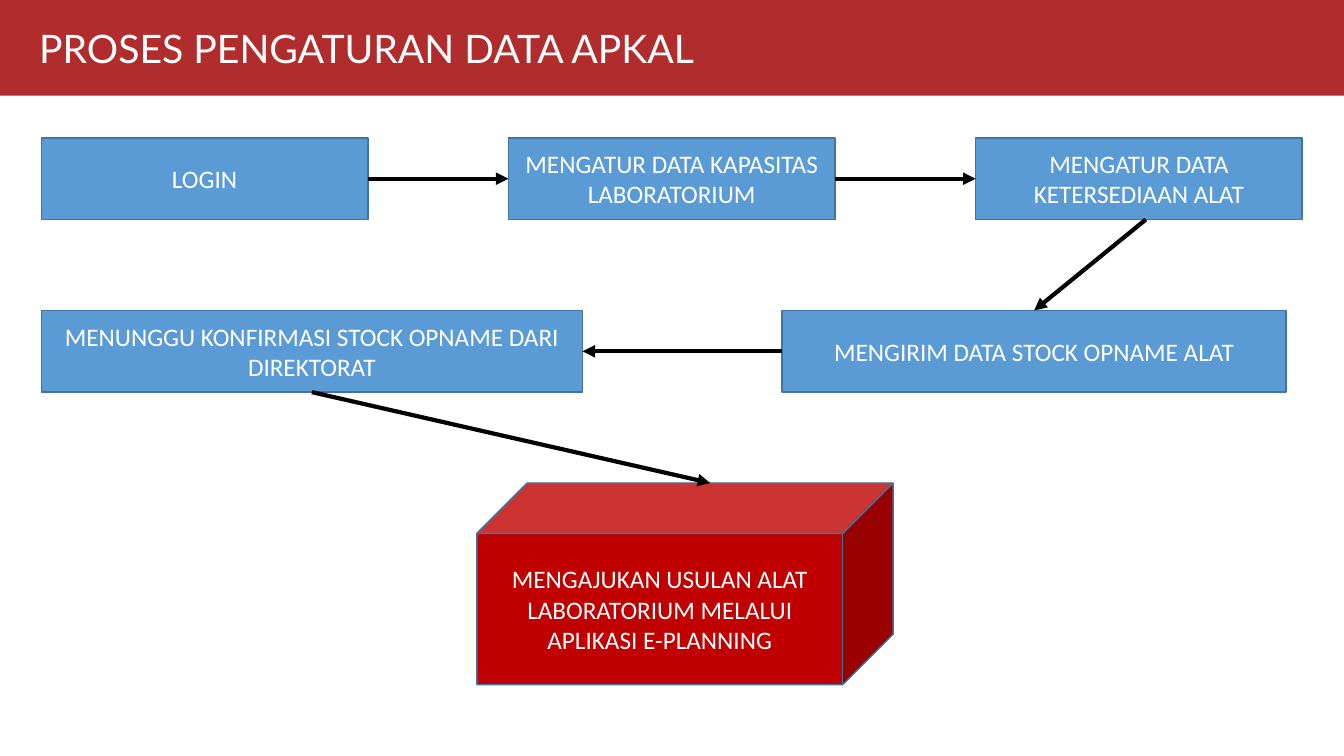
from dataclasses import dataclass

import pptx
import pptx.dml.color
import pptx.enum.shapes
import pptx.enum.text
import pptx.oxml
import pptx.oxml.ns
import pptx.util

Pt = pptx.util.Pt
SHAPES = pptx.enum.shapes.MSO_SHAPE
ALIGN = pptx.enum.text.PP_ALIGN
ANCHOR = pptx.enum.text.MSO_ANCHOR

BLUE, OUTLINE, RED, BANNER = "5B9BD5", "43739E", "C00000", "B12D2D"
WHITE, BLACK = "FFFFFF", "000000"

# Layout, in points
MARGIN = 29.5
STEP_PITCH = 333.7
STEP_WIDTH, STEP_HEIGHT = 233.3, 58.3
FIRST_ROW, SECOND_ROW, THIRD_ROW = 98.5, 221.8, 345


@dataclass
class Step:
    text: str
    left: float
    top: float
    width: float = STEP_WIDTH
    height: float = STEP_HEIGHT
    color: str = BLUE
    preset: SHAPES = SHAPES.RECTANGLE

    @property
    def right(self) -> float:
        return self.left + self.width

    @property
    def bottom(self) -> float:
        return self.top + self.height

    @property
    def middle(self) -> float:
        return self.top + self.height / 2

    @property
    def center(self) -> float:
        return self.left + self.width / 2


@dataclass
class Arrow:
    x1: float
    y1: float
    x2: float
    y2: float


def rgb(color: str) -> pptx.dml.color.RGBColor:
    return pptx.dml.color.RGBColor.from_string(color)


def fill(shape, color: str) -> None:
    shape.fill.solid()
    shape.fill.fore_color.rgb = rgb(color)


def write(shape, text: str, font: str, size: float, align: ALIGN) -> None:
    frame = shape.text_frame
    frame.word_wrap = True
    frame.vertical_anchor = ANCHOR.MIDDLE
    frame.text = text
    paragraph = frame.paragraphs[0]
    paragraph.alignment = align
    paragraph.font.name = font
    paragraph.font.size = Pt(size)
    paragraph.font.color.rgb = rgb(WHITE)


def draw_step(slide, step: Step) -> None:
    shape = slide.shapes.add_shape(
        step.preset, Pt(step.left), Pt(step.top), Pt(step.width), Pt(step.height))
    shape.shadow.inherit = False
    fill(shape, step.color)
    shape.line.color.rgb = rgb(OUTLINE)
    shape.line.width = Pt(1)
    write(shape, step.text, "Calibri", 18, ALIGN.CENTER)


def draw_arrow(slide, arrow: Arrow) -> None:
    connector = slide.shapes.add_connector(
        pptx.enum.shapes.MSO_CONNECTOR.STRAIGHT,
        Pt(arrow.x1), Pt(arrow.y1), Pt(arrow.x2), Pt(arrow.y2))
    connector.line.color.rgb = rgb(BLACK)
    connector.line.width = Pt(3)
    head = pptx.oxml.parse_xml(
        f'<a:tailEnd {pptx.oxml.ns.nsdecls("a")} type="triangle"/>')
    connector.line._get_or_add_ln().append(head)
    connector._element.spPr.append(
        pptx.oxml.parse_xml(f'<a:effectLst {pptx.oxml.ns.nsdecls("a")}/>'))


def draw_banner(banner, text: str, width: float) -> None:
    banner.left, banner.top = Pt(0), Pt(0)
    banner.width, banner.height = Pt(width), Pt(68.4)
    fill(banner, BANNER)
    frame = banner.text_frame
    frame.margin_left = frame.margin_right = Pt(28)
    frame.margin_top = frame.margin_bottom = Pt(17)
    frame.auto_size = pptx.enum.text.MSO_AUTO_SIZE.NONE
    write(banner, text, "Lato", 28, ALIGN.LEFT)


def main() -> None:
    presentation = pptx.Presentation()
    presentation.slide_width, presentation.slide_height = Pt(960), Pt(540)
    slide = presentation.slides.add_slide(presentation.slide_layouts[5])

    # Title banner
    draw_banner(slide.shapes.title, "PROSES PENGATURAN DATA APKAL", 960)

    # Process steps
    login, capacity, availability = [
        Step(text, MARGIN + column * STEP_PITCH, FIRST_ROW)
        for column, text in enumerate((
            "LOGIN",
            "MENGATUR DATA KAPASITAS LABORATORIUM",
            "MENGATUR DATA KETERSEDIAAN ALAT"))
    ]
    sending = Step("MENGIRIM DATA STOCK OPNAME ALAT", 558.7, SECOND_ROW, 360)
    confirmation = Step("MENUNGGU KONFIRMASI STOCK OPNAME DARI DIREKTORAT",
                        MARGIN, SECOND_ROW, 386.6)
    proposal = Step("MENGAJUKAN USULAN ALAT LABORATORIUM MELALUI APLIKASI E-PLANNING",
                    340.6, THIRD_ROW, 297.4, 144, RED, SHAPES.CUBE)
    for step in (login, capacity, availability, sending, confirmation, proposal):
        draw_step(slide, step)

    # Arrows between the steps; the cube's top face is offset by its depth
    cube_depth = proposal.height / 4
    arrows = (
        Arrow(login.right, login.middle, capacity.left, capacity.middle),
        Arrow(capacity.right, capacity.middle, availability.left, availability.middle),
        Arrow(818.5, availability.bottom, sending.center, sending.top),
        Arrow(sending.left, sending.middle, confirmation.right, confirmation.middle),
        Arrow(confirmation.center, confirmation.bottom,
              proposal.center + cube_depth / 2, proposal.top),
    )
    for arrow in arrows:
        draw_arrow(slide, arrow)

    presentation.save("out.pptx")


if __name__ == "__main__":
    main()
